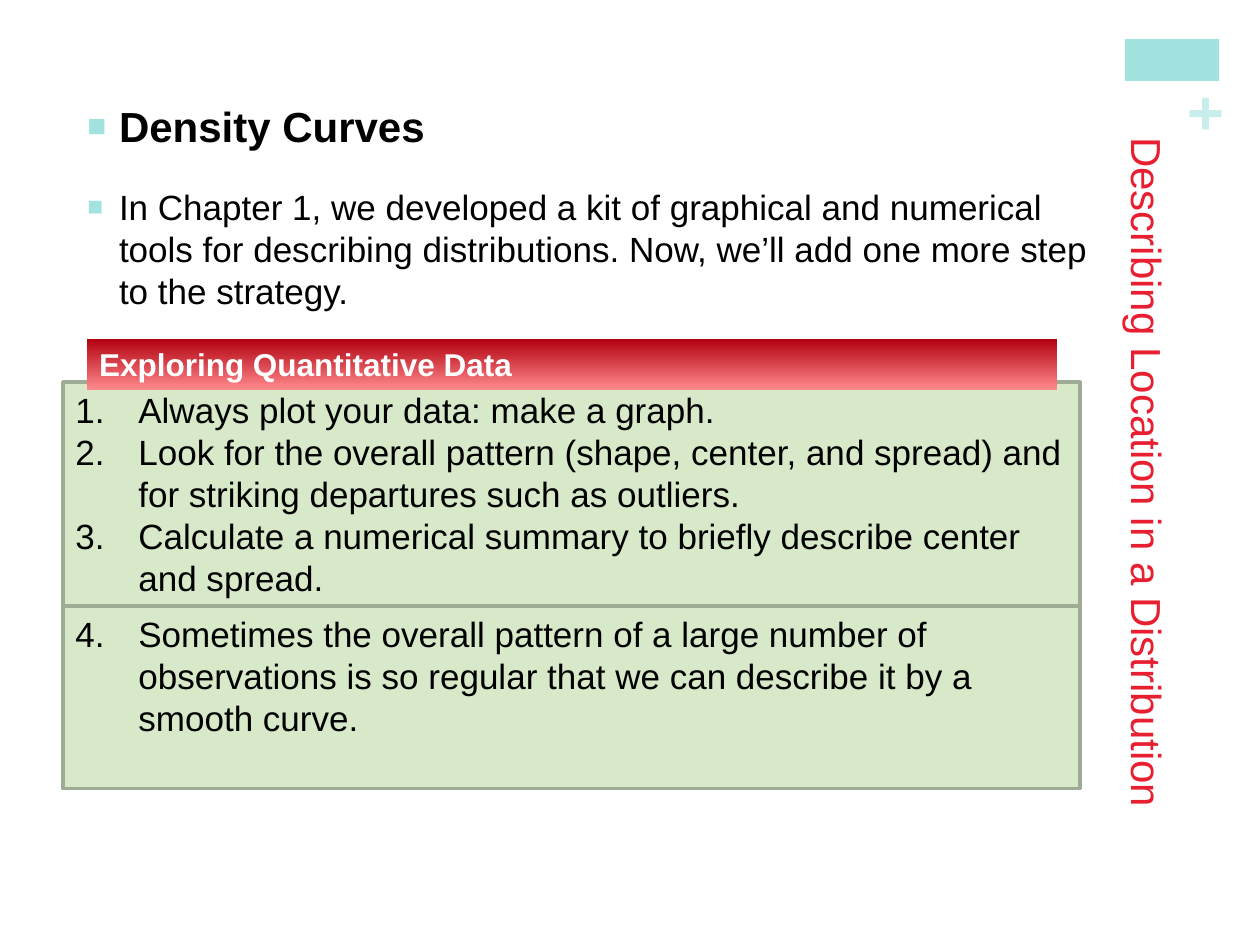
from dataclasses import dataclass

from lxml import etree
from pptx import Presentation
from pptx.dml.color import RGBColor
from pptx.enum import shapes, text
from pptx.oxml.ns import qn
from pptx.util import Cm, Pt


@dataclass(frozen=True)
class Theme:
    font: str = "Arial"
    ink: str = "000000"
    white: str = "FFFFFF"
    title: str = "E81F30"
    accent: str = "A2E3DF"
    accent_light: str = "C7EEEC"
    panel: str = "D7E9C9"
    panel_line: str = "9FAC95"
    banner: tuple = ("B1000F", "FF888B")
    plus_size: int = 36
    heading_size: int = 24
    body_size: int = 20
    banner_size: int = 18


def rgb(value):
    return RGBColor.from_string(value)


def set_attrs(obj, **values):
    for name, value in values.items():
        setattr(obj, name, value)


class SlideBuilder:
    def __init__(self, prs, theme):
        self.theme = theme
        self.s = prs.slides.add_slide(prs.slide_layouts[5])

    def add_text(self, p, words, size, color, bold=False):
        p.alignment = text.PP_ALIGN.LEFT
        r = p.add_run()
        r.text = words
        set_attrs(r.font, name=self.theme.font, size=Pt(size), bold=bold)
        r.font.color.rgb = rgb(color)

    def mark(self, p, indent, marks):
        """Hang a paragraph and add its bullet tags, given as (tag, attributes)."""
        pPr = p._p.get_or_add_pPr()
        pPr.set("marL", str(Cm(indent)))
        pPr.set("indent", str(-Cm(indent)))
        for tag, attrs in marks:
            etree.SubElement(pPr, qn(tag), attrs)

    def title(self, box, words):
        sp = self.s.shapes.title
        set_attrs(sp, **dict(zip(("left", "top", "width", "height"), map(Cm, box))))
        tf = sp.text_frame
        set_attrs(tf, auto_size=text.MSO_AUTO_SIZE.NONE, word_wrap=True,
                  vertical_anchor=text.MSO_ANCHOR.MIDDLE)
        sp.element.txBody.bodyPr.set("vert", "eaVert")
        self.add_text(tf.paragraphs[0], words, self.theme.heading_size, self.theme.title)

    def rect(self, box, fill, line=None):
        """Draw a rectangle; a pair of fill colours runs from top to bottom."""
        sp = self.s.shapes.add_shape(shapes.MSO_SHAPE.RECTANGLE, *map(Cm, box))
        sp.shadow.inherit = False
        if isinstance(fill, tuple):
            sp.fill.gradient()
            sp.fill.gradient_angle = 270
            for stop, color in zip(sp.fill.gradient_stops, fill):
                stop.color.rgb = rgb(color)
        else:
            sp.fill.solid()
            sp.fill.fore_color.rgb = rgb(fill)
        if line:
            sp.line.color.rgb = rgb(line)
            sp.line.width = Pt(2)
        else:
            sp.line.fill.background()
        tf = sp.text_frame
        set_attrs(tf, word_wrap=True, vertical_anchor=text.MSO_ANCHOR.TOP)
        return tf

    def textbox(self, box, margins, rotation=0):
        sp = self.s.shapes.add_textbox(*map(Cm, box))
        sp.rotation = rotation
        tf = sp.text_frame
        sides = ("margin_left", "margin_top", "margin_right", "margin_bottom")
        set_attrs(tf, word_wrap=True, **dict(zip(sides, map(Cm, margins))))
        return tf

    def plus(self, box):
        tf = self.textbox(box, (0, 0, 0, 0), rotation=270)
        self.add_text(tf.paragraphs[0], "+", self.theme.plus_size,
                      self.theme.accent_light, bold=True)

    def banner(self, box, words):
        tf = self.rect(box, self.theme.banner)
        self.add_text(tf.paragraphs[0], words, self.theme.banner_size,
                      self.theme.white, bold=True)

    def intro(self, box, heading, words):
        t = self.theme
        tf = self.textbox(box, (0.05, 0.38, 0.13, 0.13))
        p_head, p_body = tf.paragraphs[0], tf.add_paragraph()
        self.add_text(p_head, heading, t.heading_size, t.ink, bold=True)
        self.add_text(p_body, words, t.body_size, t.ink)
        p_body.space_before = Pt(20)
        for p in (p_head, p_body):
            self.mark(p, 0.64, [("a:buClr", {}), ("a:buSzPct", {"val": "75000"}),
                                ("a:buFont", {"typeface": t.font}),
                                ("a:buChar", {"char": "■"})])
            etree.SubElement(p._p.pPr.find(qn("a:buClr")), qn("a:srgbClr"),
                             {"val": t.accent})

    def steps(self, box, items, start=1):
        t = self.theme
        tf = self.rect(box, t.panel, t.panel_line)
        number = {"type": "arabicPeriod"}
        if start > 1:
            number["startAt"] = str(start)
        for i, words in enumerate(items):
            p = tf.add_paragraph() if i else tf.paragraphs[0]
            self.add_text(p, words, t.body_size, t.ink)
            self.mark(p, 1.27, [("a:buFont", {"typeface": t.font}),
                                ("a:buAutoNum", number)])


def main():
    prs = Presentation()
    set_attrs(prs, slide_width=Cm(25.4), slide_height=Cm(19.05))
    theme = Theme()
    b = SlideBuilder(prs, theme)

    b.rect((22.68, 0.79, 1.9, 0.84), theme.accent)
    b.plus((23.88, 1.55, 0.71, 1.55))
    b.title((22.2, 2.64, 1.88, 15.77), "Describing Location in a Distribution")
    b.intro((1.71, 1.64, 20.5, 6.05), "Density Curves",
            "In Chapter 1, we developed a kit of graphical and numerical tools for "
            "describing distributions. Now, we’ll add one more step to the strategy.")

    left, top, width, first_height = 1.27, 7.7, 20.5, 4.52
    first_steps = [
        "Always plot your data: make a graph.",
        "Look for the overall pattern (shape, center, and spread) and for striking "
        "departures such as outliers.",
        "Calculate a numerical summary to briefly describe center and spread.",
    ]
    new_step = ("Sometimes the overall pattern of a large number of observations is so "
                "regular that we can describe it by a smooth curve.")
    b.steps((left, top, width, first_height), first_steps)
    b.banner((1.75, 6.83, 19.56, 1.02), "Exploring Quantitative Data")
    b.steps((left, top + first_height, width, 3.68), [new_step],
            start=len(first_steps) + 1)

    prs.save("out.pptx")


if __name__ == "__main__":
    main()
